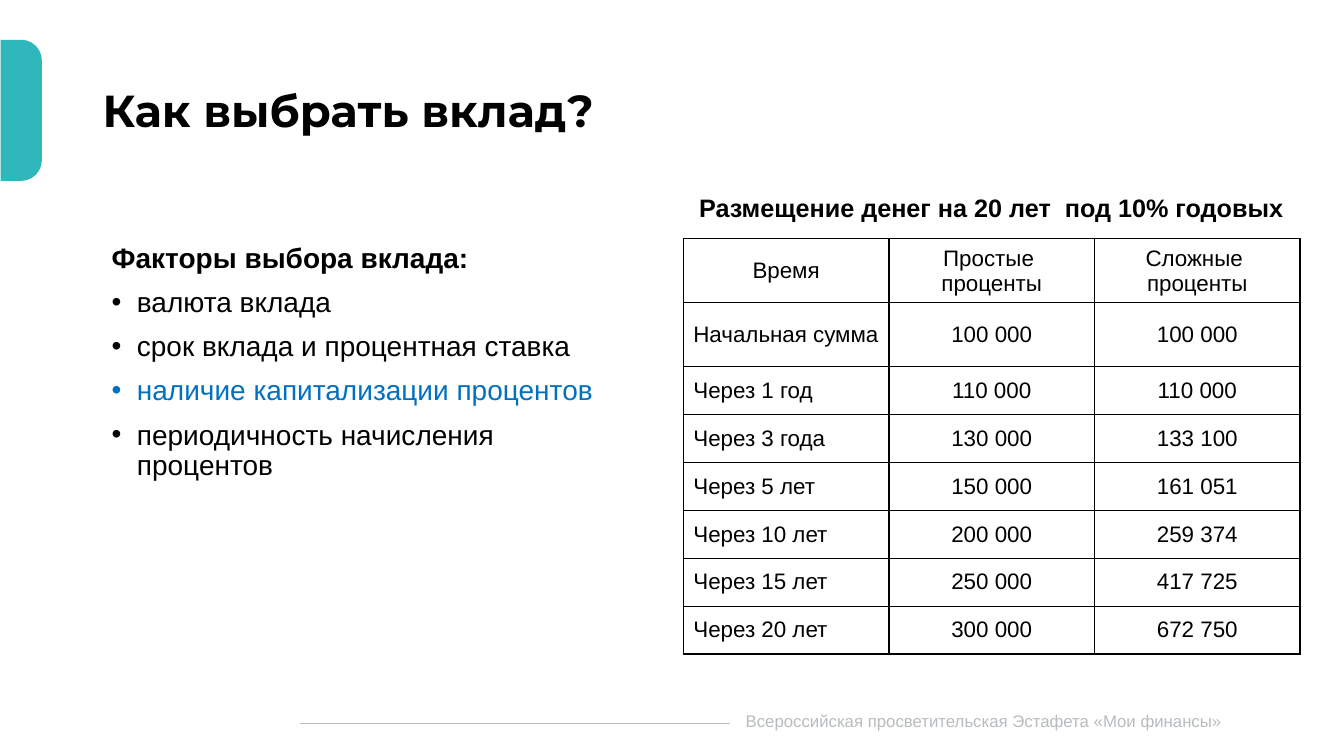
from dataclasses import dataclass

from pptx import Presentation
from pptx.dml.color import RGBColor
from pptx.enum.shapes import MSO_CONNECTOR as Conn, MSO_SHAPE as Shape
from pptx.enum.text import MSO_ANCHOR as Anchor, PP_ALIGN as Align
from pptx.oxml.xmlchemy import OxmlElement as Node
from pptx.util import Pt

SCALE = 4572


@dataclass(frozen=True)
class Theme:
    ink: str = "000000"
    blue: str = "0070C0"
    teal: str = "30B7BC"
    gray: str = "B8BCBF"
    body: str = "Arial"
    head: str = "Montserrat"
    title: int = 32
    list: int = 20
    label: int = 18
    cell: int = 16
    foot: int = 12


def px(num):
    return num * SCALE


def add_node(up, tag, **attrs):
    node = Node(tag)
    for key, val in attrs.items():
        node.set(key, str(val))
    up.append(node)
    return node


def put_text(para, text, size, color, font, bold=False, align=Align.LEFT,
             line=None, before=None, bullet=None):
    para.alignment = align
    if line:
        para.line_spacing = line
    if before:
        para.space_before = Pt(before)
    if bullet:
        props = para._p.get_or_add_pPr()
        props.set("marL", str(px(50)))
        props.set("indent", str(px(-50)))
        add_node(add_node(props, "a:buClr"), "a:srgbClr", val=color)
        add_node(props, "a:buFont", typeface=font)
        add_node(props, "a:buChar", char=bullet)
    para.text = text
    for run in para.runs:
        run.font.size = Pt(size)
        run.font.name = font
        run.font.bold = bold
        run.font.color.rgb = RGBColor.from_string(color)


class Deck:
    def __init__(self, theme):
        self.theme = theme
        self.file = Presentation()
        self.file.slide_width = px(2667)
        self.file.slide_height = px(1500)
        self.slide = self.file.slides.add_slide(self.file.slide_layouts[6])

    def tab(self, *box):
        item = self.slide.shapes.add_shape(Shape.ROUND_2_SAME_RECTANGLE, *map(px, box))
        item.adjustments[0] = 0.5
        item.adjustments[1] = 0
        item.rotation = 90
        item.shadow.inherit = False
        item.fill.solid()
        item.fill.fore_color.rgb = RGBColor.from_string(self.theme.teal)
        item.line.fill.background()

    def rule(self, *ends):
        item = self.slide.shapes.add_connector(Conn.STRAIGHT, *map(px, ends))
        item.line.color.rgb = RGBColor.from_string(self.theme.gray)
        item.line.width = Pt(0.75)
        add_node(item._element.spPr, "a:effectLst")

    def text(self, box, rows, anchor=Anchor.TOP, **style):
        frame = self.slide.shapes.add_textbox(*map(px, box)).text_frame
        frame.word_wrap = True
        frame.vertical_anchor = anchor
        base = dict(color=self.theme.ink, font=self.theme.body)
        for i, (text, extra) in enumerate(rows):
            para = frame.add_paragraph() if i else frame.paragraphs[0]
            put_text(para, text, **{**base, **style, **extra})

    def edge(self, cell):
        props = cell._tc.get_or_add_tcPr()
        for i, side in enumerate(("a:lnL", "a:lnR", "a:lnT", "a:lnB")):
            line = Node(side)
            line.set("w", str(Pt(1)))
            add_node(add_node(line, "a:solidFill"), "a:srgbClr", val=self.theme.ink)
            props.insert(i, line)

    def table(self, left, top, wide, highs, data):
        cols = len(data[0])
        grid = self.slide.shapes.add_table(
            len(data), cols, px(left), px(top), px(wide * cols), px(sum(highs))).table
        grid.first_row = False
        grid.horz_banding = False
        for col in grid.columns:
            col.width = px(wide)
        for r, (high, row) in enumerate(zip(highs, data)):
            grid.rows[r].height = px(high)
            for c, text in enumerate(row):
                cell = grid.cell(r, c)
                cell.fill.background()
                cell.vertical_anchor = Anchor.MIDDLE
                self.edge(cell)
                put_text(cell.text_frame.paragraphs[0], text, self.theme.cell,
                         self.theme.ink, self.theme.body,
                         align=Align.LEFT if r and not c else Align.CENTER)


def main():
    theme = Theme()
    deck = Deck(theme)
    deck.text((1460, 1390, 1172, 80),
              [("Всероссийская просветительская Эстафета «Мои финансы»", {})],
              anchor=Anchor.MIDDLE, size=theme.foot, color=theme.gray)
    deck.rule(596, 1435, 1448, 1435)
    deck.tab(-98, 178, 280, 82)
    item = dict(bullet="•", before=10)
    deck.text((202, 474, 1082, 964), [
        ("Факторы выбора вклада:", dict(bold=True)),
        ("валюта вклада", item),
        ("срок вклада и процентная ставка", item),
        ("наличие капитализации процентов", {**item, "color": theme.blue}),
        ("периодичность начисления процентов", item),
    ], size=theme.list, line=0.9)
    deck.table(1356, 474, 408, [127] * 2 + [95] * 6, [
        ("Время", "Простые \vпроценты", "Сложные \vпроценты"),
        ("Начальная сумма", "100 000", "100 000"),
        ("Через 1 год", "110 000", "110 000"),
        ("Через 3 года", "130 000", "133 100"),
        ("Через 5 лет", "150 000", "161 051"),
        ("Через 10 лет", "200 000", "259 374"),
        ("Через 15 лет", "250 000", "417 725"),
        ("Через 20 лет", "300 000", "672 750"),
    ])
    deck.text((1356, 378, 1222, 160),
              [("Размещение денег на 20 лет  под 10% годовых", {})],
              size=theme.label, bold=True, align=Align.CENTER, line=0.9)
    deck.text((184, 80, 2300, 290), [("Как выбрать вклад?", {})],
              anchor=Anchor.MIDDLE, size=theme.title, font=theme.head,
              bold=True, line=0.9)
    deck.file.save("out.pptx")


if __name__ == "__main__":
    main()
